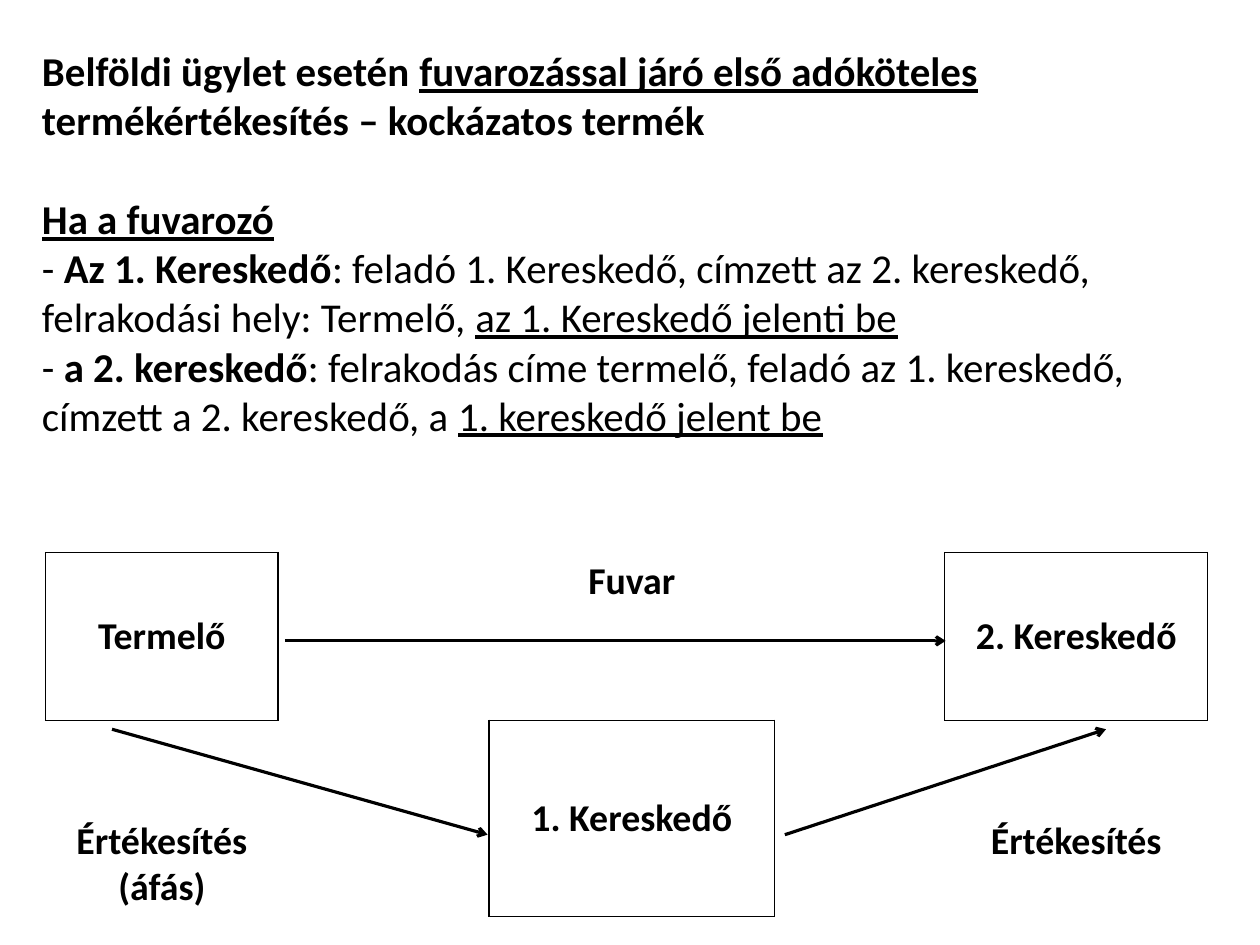
from lxml.etree import SubElement
from pptx import Presentation
from pptx.dml.color import RGBColor
from pptx.enum.shapes import MSO_CONNECTOR
from pptx.enum.text import MSO_ANCHOR, MSO_AUTO_SIZE, PP_ALIGN
from pptx.oxml.ns import qn
from pptx.util import Cm, Pt

BLACK = RGBColor(0x00, 0x00, 0x00)
WHITE = RGBColor(0xFF, 0xFF, 0xFF)
FONT = "Calibri"


def add_run(paragraph, text, size, bold=False, underline=False):
    run = paragraph.add_run()
    run.text = text
    run.font.name = FONT
    run.font.size = Pt(size)
    run.font.bold = bold
    run.font.underline = underline
    run.font.color.rgb = BLACK


def add_border(cell_props, side, visible):
    border = SubElement(cell_props, qn(f"a:ln{side}"), w=str(Pt(1)))
    if visible:
        fill = SubElement(border, qn("a:solidFill"))
        SubElement(fill, qn("a:srgbClr"), val=str(BLACK))
    else:
        SubElement(border, qn("a:noFill"))


prs = Presentation()
prs.slide_width, prs.slide_height = Cm(28.22), Cm(21.16)
slide = prs.slides.add_slide(prs.slide_layouts[5])

# Rule text: (text, bold, underlined) runs by paragraph
RULES = [
    [("Belföldi ügylet esetén ", True, False),
     ("fuvarozással járó első adóköteles ", True, True),
     ("termékértékesítés – kockázatos termék", True, False)],
    [("Ha a fuvarozó", True, True)],
    [("- ", False, False),
     ("Az 1. Kereskedő", True, False),
     (": feladó 1. Kereskedő, címzett az 2. kereskedő, felrakodási hely: Termelő, ", False, False),
     ("az 1. Kereskedő jelenti be", False, True)],
    [("- ", False, False),
     ("a 2. kereskedő", True, False),
     (": felrakodás címe termelő, feladó az 1. kereskedő, címzett a 2. kereskedő, a ", False, False),
     ("1. kereskedő jelent be", False, True)],
]
rules = slide.shapes.title
rules.left, rules.top, rules.width, rules.height = Cm(0.79), Cm(0.87), Cm(26.9), Cm(11.12)
frame = rules.text_frame
frame.word_wrap = True
frame.auto_size = MSO_AUTO_SIZE.NONE
frame.vertical_anchor = MSO_ANCHOR.TOP
frame.margin_left = frame.margin_right = frame.margin_top = frame.margin_bottom = Cm(0.15)
for index, runs in enumerate(RULES):
    paragraph = frame.paragraphs[0] if index == 0 else frame.add_paragraph()
    paragraph.alignment = PP_ALIGN.LEFT
    for text, bold, underline in runs:
        add_run(paragraph, text, 26, bold, underline)
frame.paragraphs[1].space_before = Pt(31.7)

# Trade chain: a table whose boxed cells are the parties
COLUMNS = [5.21, 4.72, 6.4, 3.81, 5.89]
ROWS = [3.76, 4.39]
PARTIES = {(0, 0): "Termelő", (0, 4): "2. Kereskedő", (1, 2): "1. Kereskedő"}
DEALS = {(0, 2): ("Fuvar", 0.13), (1, 0): ("Értékesítés (áfás)", 2.2),
         (1, 4): ("Értékesítés", 2.2)}  # label, top margin
NEIGHBOURS = {"L": (0, -1), "R": (0, 1), "T": (-1, 0), "B": (1, 0)}

chain = slide.shapes.add_table(len(ROWS), len(COLUMNS), Cm(1.02), Cm(12.37),
                               Cm(sum(COLUMNS)), Cm(sum(ROWS))).table
chain.first_row = chain.horz_banding = False
for column, width in zip(chain.columns, COLUMNS):
    column.width = Cm(width)
for row, height in zip(chain.rows, ROWS):
    row.height = Cm(height)

for r in range(len(ROWS)):
    for c in range(len(COLUMNS)):
        cell = chain.cell(r, c)
        cell_props = cell._tc.get_or_add_tcPr()
        for side, (down, right) in NEIGHBOURS.items():
            add_border(cell_props, side,
                       (r, c) in PARTIES or (r + down, c + right) in PARTIES)
        cell.fill.solid()
        cell.fill.fore_color.rgb = WHITE
        label = PARTIES.get((r, c))
        if label:
            cell.vertical_anchor = MSO_ANCHOR.MIDDLE
        elif (r, c) in DEALS:
            label, margin = DEALS[r, c]
            cell.margin_top = Cm(margin)
        if label:
            paragraph = cell.text_frame.paragraphs[0]
            paragraph.alignment = PP_ALIGN.CENTER
            add_run(paragraph, label, 24, bold=True)

# Arrows between the parties
ARROWS = [
    (6.38, 14.35, 21.18, 14.35),
    (2.51, 16.33, 10.92, 18.69),
    (17.58, 18.69, 24.77, 16.33),
]
for ends in ARROWS:
    arrow = slide.shapes.add_connector(MSO_CONNECTOR.STRAIGHT, *map(Cm, ends))
    arrow.line.color.rgb = BLACK
    arrow.line.width = Pt(2)
    props = arrow._element.spPr
    SubElement(props.find(qn("a:ln")), qn("a:tailEnd"), type="arrow")
    SubElement(props, qn("a:effectLst"))

prs.save("out.pptx")
